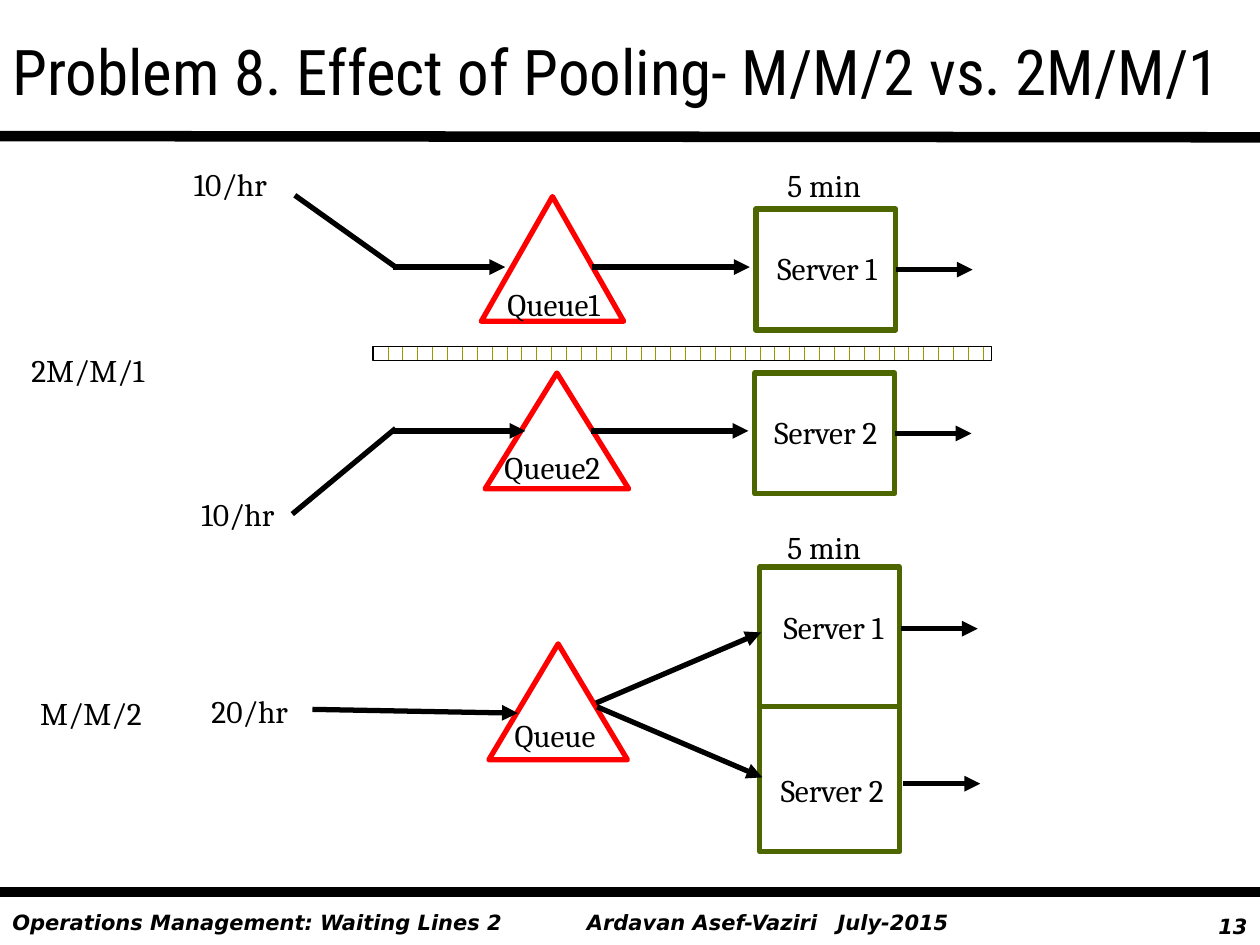
"""Build the slide that compares two separate queues with one pooled queue."""
from lxml.etree import SubElement
from pptx import Presentation
from pptx.dml.color import RGBColor
from pptx.enum.dml import MSO_PATTERN
from pptx.enum.shapes import MSO_CONNECTOR, MSO_SHAPE
from pptx.enum.text import MSO_ANCHOR, PP_ALIGN as Align
from pptx.oxml.ns import qn
from pptx.util import Inches, Pt

COLORS = {"ink": "000000", "server": "4D6600", "queue": "FF0000",
          "brick": "999900", "paper": "FFFFFF"}

TITLE = "Problem 8. Effect of Pooling- M/M/2 vs. 2M/M/1"
FOOTERS = [
    ("Operations Management: Waiting Lines 2", 0, 7.17, 4.67, Align.LEFT),
    ("Ardavan Asef-Vaziri\tJuly-2015", 4.56, 7.17, 3.35, Align.LEFT),
    ("13", 9.25, 7.2, 0.75, Align.RIGHT),
]
DATE_TAB = 1.99
RULES = [((0, 1.08), (10, 1.09)), ((0, 7.08), (10, 7.08))]

SERVERS = [(6, 1.66, 1.11, 0.96), (5.99, 2.96, 1.11, 0.96), (6.03, 4.5, 1.11, 2.26)]
POOL_DIVIDER = ((6.03, 5.61), (7.15, 5.61))
QUEUES = [(3.82, 1.56, 1.13, 0.99), (3.85, 2.96, 1.14, 0.92), (3.88, 5.11, 1.1, 0.92)]
BARRIER = (2.96, 2.75, 4.91, 0.11)

ARRIVALS = [((3.14, 2.12), (2.34, 1.55)), ((3.14, 3.4), (2.32, 4.08))]
ARROWS = [
    ((3.12, 2.12), (4.01, 2.12)), ((4.7, 2.12), (5.95, 2.12)),
    ((3.12, 3.42), (4.17, 3.42)), ((4.69, 3.42), (5.94, 3.42)),
    ((2.48, 5.63), (4.11, 5.66)),
    ((4.73, 5.58), (6.04, 5.02)), ((4.74, 5.61), (6.05, 6.17)),
]
EXIT_STARTS = [(7.11, 2.14), (7.1, 3.44), (7.15, 4.99), (7.17, 6.22)]
EXIT_LENGTH = 0.61

CENTERED_LABELS = [
    ("Server 1", 6.01, 1.93, 1.11), ("Server 2", 6, 3.23, 1.11),
    ("Server 1", 6.06, 4.78, 1.11), ("Server 2", 6.05, 6.07, 1.11),
    ("Queue1", 3.86, 2.21, 1.07), ("Queue2", 3.85, 3.51, 1.07),
    ("Queue", 3.93, 5.63, 0.95),
]
LEFT_LABELS = [
    ("10/hr", 1.44, 1.26, 0.85), ("10/hr", 1.5, 3.88, 0.85),
    ("20/hr", 1.58, 5.44, 0.85),
    ("5 min", 6.15, 1.27, 0.83), ("5 min", 6.15, 4.14, 0.83),
    ("2M/M/1", 0.15, 2.74, 1.46), ("M/M/2", 0.22, 5.46, 1.46),
]


def color(name):
    return RGBColor.from_string(COLORS[name])


def add_text(slide, text, left, top, width, height=0.4, size=18, face="Cambria",
             align=Align.LEFT, wrap=False, strong=False, tab=None):
    box = slide.shapes.add_textbox(*map(Inches, (left, top, width, height)))
    frame = box.text_frame
    frame.word_wrap = wrap
    frame.vertical_anchor = MSO_ANCHOR.MIDDLE if height > 1 else MSO_ANCHOR.TOP
    para = frame.paragraphs[0]
    para.text = text
    para.alignment = align
    if tab:
        stops = SubElement(para._p.get_or_add_pPr(), qn("a:tabLst"))
        SubElement(stops, qn("a:tab"), pos=str(Inches(tab)), algn="l")
    font = para.font
    font.name, font.size = face, Pt(size)
    font.color.rgb = color("ink")
    font.bold = font.italic = strong


def add_line(slide, start, end, line_color="ink", weight=3, arrow=False):
    line = slide.shapes.add_connector(MSO_CONNECTOR.STRAIGHT, *map(Inches, start + end))
    line.line.color.rgb = color(line_color)
    line.line.width = Pt(weight)
    if arrow:
        SubElement(line.line._get_or_add_ln(), qn("a:tailEnd"), type="triangle")
    SubElement(line._element.spPr, qn("a:effectLst"))


def add_outline(slide, kind, place, line_color, weight=3):
    shape = slide.shapes.add_shape(kind, *map(Inches, place))
    shape.shadow.inherit = False
    shape.fill.background()
    shape.line.color.rgb = color(line_color)
    shape.line.width = Pt(weight)
    return shape


def main():
    deck = Presentation()
    deck.slide_width, deck.slide_height = Inches(10), Inches(7.5)
    slide = deck.slides.add_slide(deck.slide_layouts[6])

    for text, left, top, width, align in FOOTERS:
        add_text(slide, text, left, top, width, 0.3, 12, "DejaVu Sans", align,
                 wrap=True, strong=True, tab=DATE_TAB if "\t" in text else None)
    for start, end in RULES:
        add_line(slide, start, end, weight=6)
    add_text(slide, TITLE, 0, 0, 10, 1.11, 36, "Roboto Condensed", wrap=True)

    for place in SERVERS:
        add_outline(slide, MSO_SHAPE.RECTANGLE, place, "server")
    add_line(slide, *POOL_DIVIDER, line_color="server")
    for place in QUEUES:
        add_outline(slide, MSO_SHAPE.ISOSCELES_TRIANGLE, place, "queue")

    barrier = add_outline(slide, MSO_SHAPE.RECTANGLE, BARRIER, "ink", 0.75)
    barrier.fill.patterned()
    barrier.fill.pattern = MSO_PATTERN.HORIZONTAL_BRICK
    barrier.fill.fore_color.rgb = color("brick")
    barrier.fill.back_color.rgb = color("paper")

    for start, end in ARRIVALS:
        add_line(slide, start, end)
    exits = [((x, y), (x + EXIT_LENGTH, y)) for x, y in EXIT_STARTS]
    for start, end in ARROWS + exits:
        add_line(slide, start, end, arrow=True)

    for label in CENTERED_LABELS:
        add_text(slide, *label, align=Align.CENTER)
    for label in LEFT_LABELS:
        add_text(slide, *label)

    deck.save("out.pptx")


if __name__ == "__main__":
    main()
